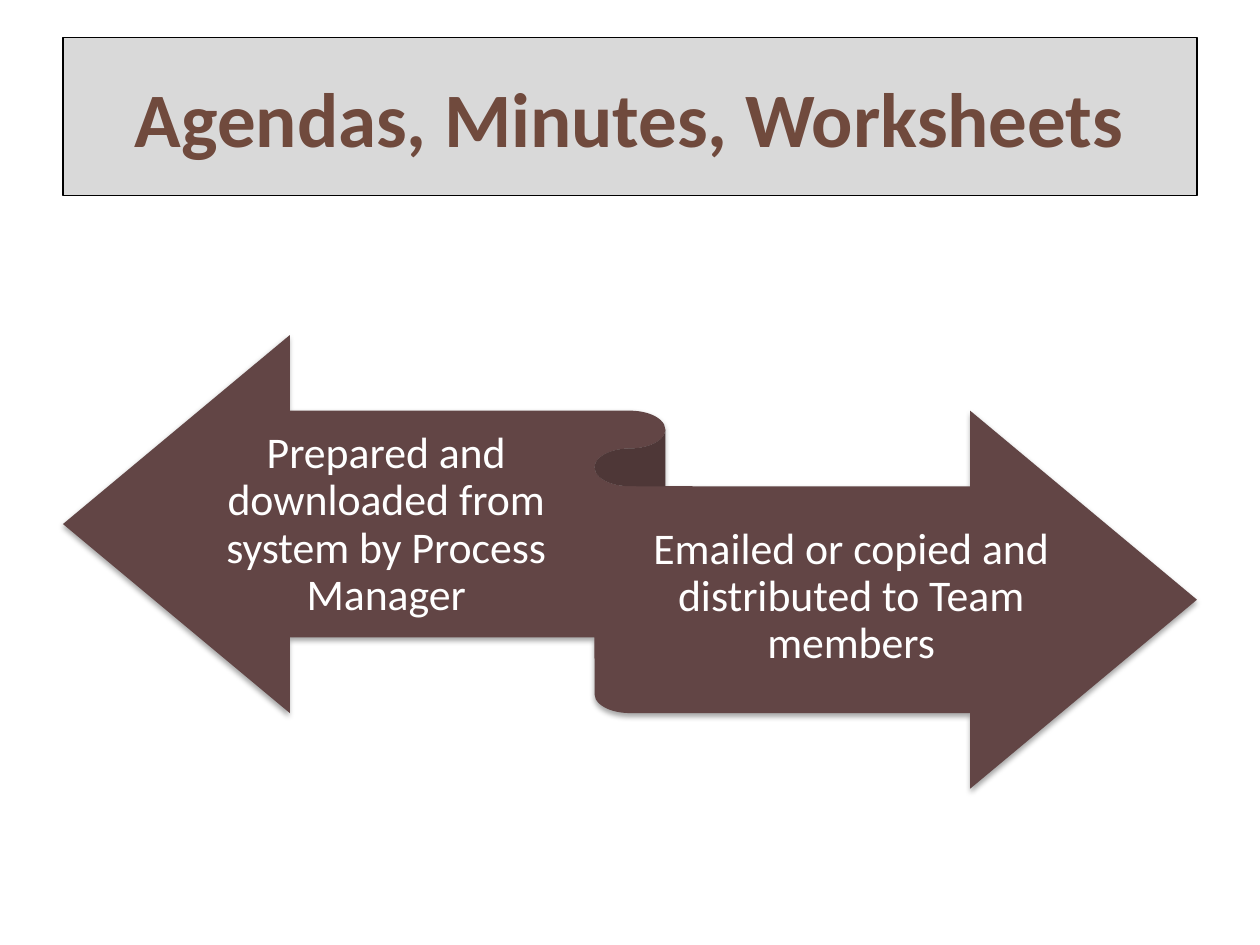
"""Build the slide on agendas, minutes and worksheets."""
import pptx
import pptx.dml.color
import pptx.enum.shapes
import pptx.enum.text
import pptx.oxml
import pptx.oxml.ns
import pptx.util

Pt = pptx.util.Pt

HEADING = "Agendas, Minutes, Worksheets"
STEPS = [
    ("Prepared and downloaded from system by Process Manager", (113.76, 236.88, 213.84, 126.72)),
    ("Emailed or copied and distributed to Team members", (360, 277.92, 252.72, 126.72)),
]

THEME = {
    "font": "Calibri",
    "heading": "704A3D",
    "banner": "D9D9D9",
    "border": "000000",
    "ribbon": "624545",
    "step": "FFFFFF",
    "heading_size": 44,
    "step_size": 25,
}

SLIDE_WIDTH, SLIDE_HEIGHT = 720, 540
MARGIN = 36
CONTENT_WIDTH = SLIDE_WIDTH - 2 * MARGIN
BANNER_TOP, BANNER_HEIGHT = 21.6, 90
RIBBON_TOP, RIBBON_HEIGHT = 191.52, 259.2
STEP_INSET = 7.2

SHADOW = (
    f'<a:effectLst {pptx.oxml.ns.nsdecls("a")}>'
    f'<a:outerShdw blurRad="{Pt(3.1)}" dist="{Pt(1.8)}" dir="5400000" rotWithShape="0">'
    '<a:srgbClr val="000000"><a:alpha val="35000"/></a:srgbClr>'
    "</a:outerShdw></a:effectLst>"
)


def color(part):
    return pptx.dml.color.RGBColor.from_string(THEME[part])


def fill(shape, part):
    shape.fill.solid()
    shape.fill.fore_color.rgb = color(part)


def write(frame, text, part, bold=False):
    frame.word_wrap = True
    frame.auto_size = pptx.enum.text.MSO_AUTO_SIZE.NONE
    frame.vertical_anchor = pptx.enum.text.MSO_ANCHOR.MIDDLE
    paragraph = frame.paragraphs[0]
    paragraph.alignment = pptx.enum.text.PP_ALIGN.CENTER
    run = paragraph.add_run()
    run.text = text
    run.font.name = THEME["font"]
    run.font.size = Pt(THEME[part + "_size"])
    run.font.bold = bold
    run.font.color.rgb = color(part)
    return paragraph


def add_heading(slide):
    heading = slide.shapes.title
    heading.left, heading.top = Pt(MARGIN), Pt(BANNER_TOP)
    heading.width, heading.height = Pt(CONTENT_WIDTH), Pt(BANNER_HEIGHT)
    fill(heading, "banner")
    heading.line.color.rgb = color("border")
    heading.line.width = Pt(0.75)
    write(heading.text_frame, HEADING, "heading", bold=True)


def add_ribbon(slide):
    ribbon = slide.shapes.add_shape(
        pptx.enum.shapes.MSO_SHAPE.LEFT_RIGHT_RIBBON,
        Pt(MARGIN), Pt(RIBBON_TOP), Pt(CONTENT_WIDTH), Pt(RIBBON_HEIGHT),
    )
    fill(ribbon, "ribbon")
    ribbon.line.fill.background()
    ribbon._element.spPr.append(pptx.oxml.parse_xml(SHADOW))


def add_step(slide, text, box):
    step = slide.shapes.add_textbox(*map(Pt, box)).text_frame
    step.margin_left = step.margin_right = 0
    step.margin_top = step.margin_bottom = Pt(STEP_INSET)
    write(step, text, "step").line_spacing = 0.9


def main():
    deck = pptx.Presentation()
    deck.slide_width, deck.slide_height = Pt(SLIDE_WIDTH), Pt(SLIDE_HEIGHT)
    slide = deck.slides.add_slide(deck.slide_layouts.get_by_name("Title Only"))
    add_heading(slide)
    add_ribbon(slide)
    for text, box in STEPS:
        add_step(slide, text, box)
    deck.save("out.pptx")


if __name__ == "__main__":
    main()
